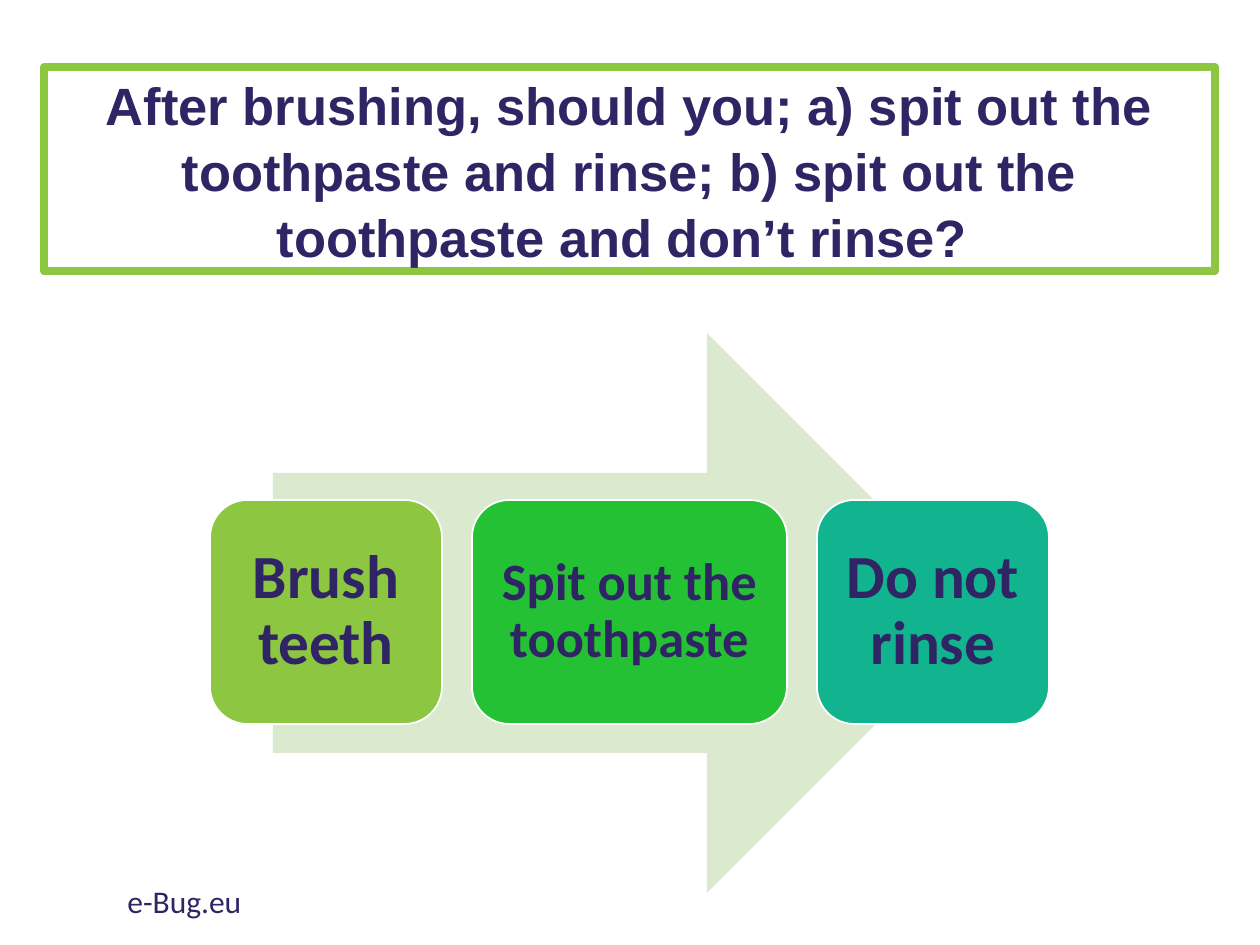
from pptx import Presentation
from pptx.dml.color import RGBColor
from pptx.enum.shapes import MSO_SHAPE as SHAPE
from pptx.enum.text import MSO_ANCHOR as ANCHOR, PP_ALIGN as ALIGN
from pptx.util import Pt

PX = 914400 // 126
NAVY = "302564"
GREEN = "8DC641"
WHITE = "FFFFFF"


def color(code):
    return RGBColor.from_string(code)


def add_span(para, text, size, font, bold=False):
    span = para.add_run()
    span.text = text
    span.font.size = Pt(size)
    span.font.name = font
    span.font.bold = bold
    span.font.color.rgb = color(NAVY)


deck = Presentation()
deck.slide_width, deck.slide_height = 1260 * 914400 // 126, 945 * 914400 // 126
page = deck.slides.add_slide(deck.slide_layouts[5])

# Framed question
title = page.shapes.title
title.left, title.top, title.width, title.height = 44 * PX, 67 * PX, 1171 * PX, 204 * PX
title.fill.solid()
title.fill.fore_color.rgb = color(WHITE)
title.line.color.rgb = color(GREEN)
title.line.width = Pt(4.5)
title.text_frame.word_wrap = True
title.text_frame.vertical_anchor = ANCHOR.MIDDLE
para = title.text_frame.paragraphs[0]
para.alignment = ALIGN.CENTER
para.line_spacing = 1.05
add_span(para, "After brushing, should you; a) spit out the toothpaste and rinse; "
               "b) spit out the toothpaste and don’t rinse? ", 30, "Arial", True)

# Arrow behind the steps
arrow = page.shapes.add_shape(SHAPE.RIGHT_ARROW, 273 * PX, 333 * PX, 714 * PX, 560 * PX)
arrow.shadow.inherit = False
arrow.fill.solid()
arrow.fill.fore_color.rgb = color("DBEACF")
arrow.line.fill.background()

# Steps, left to right with equal gaps: text, width, fill, text size, inset
steps = [
    ("Brush teeth", 232, GREEN, 35, 29),
    ("Spit out the toothpaste", 315, "25C135", 30, 26),
    ("Do not rinse", 232, "12B38F", 35, 29),
]
GAP = 30
left = 210
for text, width, fill, size, inset in steps:
    box = page.shapes.add_shape(SHAPE.ROUNDED_RECTANGLE, left * PX, 500 * PX, width * PX, 224 * PX)
    box.shadow.inherit = False
    box.fill.solid()
    box.fill.fore_color.rgb = color(fill)
    box.line.color.rgb = color(WHITE)
    box.line.width = Pt(1)
    frame = box.text_frame
    frame.word_wrap = True
    frame.vertical_anchor = ANCHOR.MIDDLE
    # The rounded corners already inset the text by about 11 px
    frame.margin_left = frame.margin_right = (inset - 11) * PX
    frame.margin_top = frame.margin_bottom = (inset - 11) * PX
    para = frame.paragraphs[0]
    para.alignment = ALIGN.CENTER
    para.line_spacing = 0.9
    add_span(para, text, size, "Calibri", True)
    left += width + GAP

# Web address
footer = page.shapes.add_textbox(115 * PX, 876 * PX, 426 * PX, 50 * PX)
footer.text_frame.word_wrap = True
add_span(footer.text_frame.paragraphs[0], "e-Bug.eu", 18, "Calibri")

deck.save("out.pptx")
